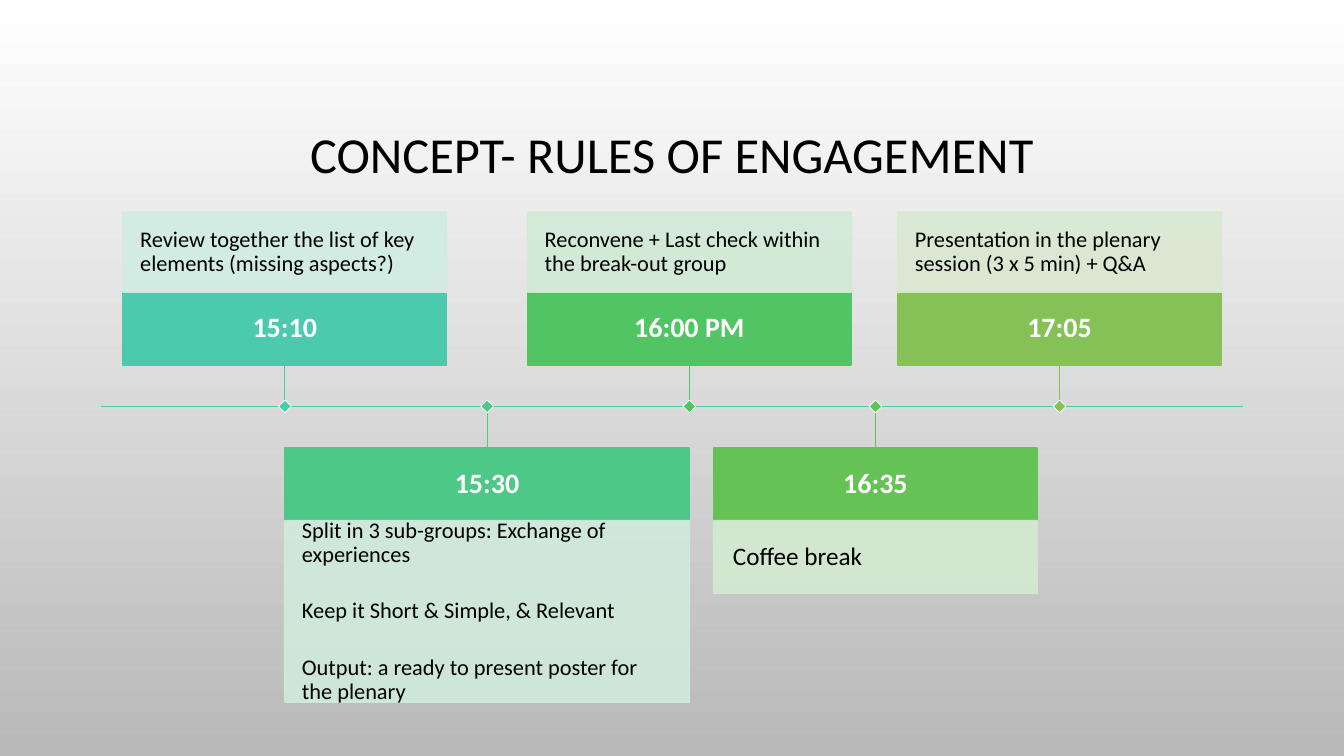
from collections import namedtuple

from lxml import etree
from pptx import Presentation
from pptx.dml.color import RGBColor
from pptx.enum.shapes import MSO_CONNECTOR, MSO_SHAPE
from pptx.enum.text import MSO_ANCHOR, PP_ALIGN
from pptx.oxml.ns import qn
from pptx.util import Inches, Pt

SLIDE_WIDTH, SLIDE_HEIGHT = Inches(13.33), Inches(7.5)
ROW = Inches(0.18)
COLUMN = Inches(3.21) / 8
GRID_LEFT = Inches(1.22)
MARGIN = Inches(1)
AXIS_TOP = round(22.4 * ROW)
STEM = round(2.3 * ROW)
HEADER_HEIGHT = 4 * ROW
MARKER = ROW // 2

FONT = "Calibri"
BLACK = RGBColor(0x00, 0x00, 0x00)
WHITE = RGBColor(0xFF, 0xFF, 0xFF)
GREY = RGBColor(0xB9, 0xB9, 0xB9)
TEAL, PALE_TEAL = RGBColor(0x4B, 0xCA, 0xAD), RGBColor(0xD0, 0xEC, 0xE3)
SEA, PALE_SEA = RGBColor(0x4E, 0xC8, 0x87), RGBColor(0xD0, 0xEB, 0xDC)
GREEN, PALE_GREEN = RGBColor(0x51, 0xC5, 0x64), RGBColor(0xD0, 0xEA, 0xD5)
LEAF, PALE_LEAF = RGBColor(0x64, 0xC3, 0x54), RGBColor(0xD3, 0xEA, 0xD1)
OLIVE, PALE_OLIVE = RGBColor(0x86, 0xC1, 0x57), RGBColor(0xD9, 0xE9, 0xD1)

# center and width count columns, rows is the height of the detail box
Step = namedtuple("Step", "time details center width rows above size inset color pale")
STEPS = [
    Step("15:10", ["Review together the list of key elements (missing aspects?)"],
         4, 8, 4.4, True, 16, 0.17, TEAL, PALE_TEAL),
    Step("15:30", ["Split in 3 sub-groups: Exchange of experiences",
                   "Keep it Short & Simple, & Relevant",
                   "Output: a ready to present poster for the plenary"],
         9, 10, 10, False, 16, 0.17, SEA, PALE_SEA),
    Step("16:00 PM", ["Reconvene + Last check within the break-out group"],
         14, 8, 4.4, True, 16, 0.17, GREEN, PALE_GREEN),
    Step("16:35", ["Coffee break"],
         18.6, 8, 4, False, 18, 0.19, LEAF, PALE_LEAF),
    Step("17:05", ["Presentation in the plenary session (3 x 5 min) + Q&A"],
         23.15, 8, 4.4, True, 16, 0.17, OLIVE, PALE_OLIVE),
]


def write(shape, lines, size, color, align, bold=False, inset=0.11):
    frame = shape.text_frame
    frame.word_wrap = True
    frame.vertical_anchor = MSO_ANCHOR.MIDDLE
    frame.margin_left = frame.margin_right = Inches(inset)
    frame.margin_top = frame.margin_bottom = 0
    frame.text = "\n".join(lines)
    for index, paragraph in enumerate(frame.paragraphs):
        paragraph.alignment = align
        paragraph.line_spacing = 0.9
        paragraph.space_before = Pt(23 if index else 0)
        font = paragraph.runs[0].font
        font.name, font.size, font.bold = FONT, Pt(size), bold
        font.color.rgb = color


def set_opacity(shape, percent):
    """Apply the opacity to both fill and outline."""
    for color in shape.fill._xPr.iter(qn("a:srgbClr")):
        etree.SubElement(color, qn("a:alpha")).set("val", str(percent * 1000))


def add_box(slide, left, top, width, height, fill, outline, weight=1.25):
    shape = slide.shapes.add_shape(MSO_SHAPE.RECTANGLE, left, top, width, height)
    shape.shadow.inherit = False
    shape.fill.solid()
    shape.fill.fore_color.rgb = fill
    shape.line.color.rgb = outline
    shape.line.width = Pt(weight)
    return shape


def add_line(slide, start, end, color, weight):
    line = slide.shapes.add_connector(MSO_CONNECTOR.STRAIGHT, *start, *end)
    line.line.color.rgb = color
    line.line.width = Pt(weight)
    etree.SubElement(line._element.spPr, qn("a:effectLst"))


def add_step(slide, step):
    center = round(GRID_LEFT + step.center * COLUMN)
    width = round(step.width * COLUMN)
    left = center - width // 2
    detail_height = round(step.rows * ROW)
    if step.above:
        stem_end = AXIS_TOP - STEM
        header_top = stem_end - HEADER_HEIGHT
        detail_top = header_top - detail_height
    else:
        stem_end = header_top = AXIS_TOP + STEM
        detail_top = header_top + HEADER_HEIGHT

    header = add_box(slide, left, header_top, width, HEADER_HEIGHT, step.color, step.color)
    write(header, [step.time], 20, WHITE, PP_ALIGN.CENTER, bold=True)
    detail = add_box(slide, left, detail_top, width, detail_height, step.pale, step.pale)
    set_opacity(detail, 90)
    write(detail, step.details, step.size, BLACK, PP_ALIGN.LEFT, inset=step.inset)

    add_line(slide, (center, AXIS_TOP), (center, stem_end), step.color, 0.75)
    marker = add_box(slide, center - MARKER // 2, AXIS_TOP - MARKER // 2,
                     MARKER, MARKER, step.color, WHITE, 0.5)
    marker.rotation = 45


def set_background(slide):
    fill = slide.background.fill
    fill.gradient()
    fill.gradient_angle = 270
    for stop, color, position in zip(fill.gradient_stops, (WHITE, GREY), (0, 1)):
        stop.color.rgb = color
        stop.position = position


def set_title(slide, text):
    title = slide.shapes.title
    title.left, title.top = MARGIN, Inches(0.68)
    title.width, title.height = SLIDE_WIDTH - 2 * MARGIN, Inches(1.75)
    write(title, [text], 36, BLACK, PP_ALIGN.CENTER)


def main():
    presentation = Presentation()
    presentation.slide_width, presentation.slide_height = SLIDE_WIDTH, SLIDE_HEIGHT
    slide = presentation.slides.add_slide(presentation.slide_layouts.get_by_name("Title Only"))
    set_background(slide)
    set_title(slide, "CONCEPT- RULES OF ENGAGEMENT")
    add_line(slide, (MARGIN, AXIS_TOP), (SLIDE_WIDTH - MARGIN, AXIS_TOP), TEAL, 1.25)
    for step in STEPS:
        add_step(slide, step)
    presentation.save("out.pptx")


if __name__ == "__main__":
    main()
